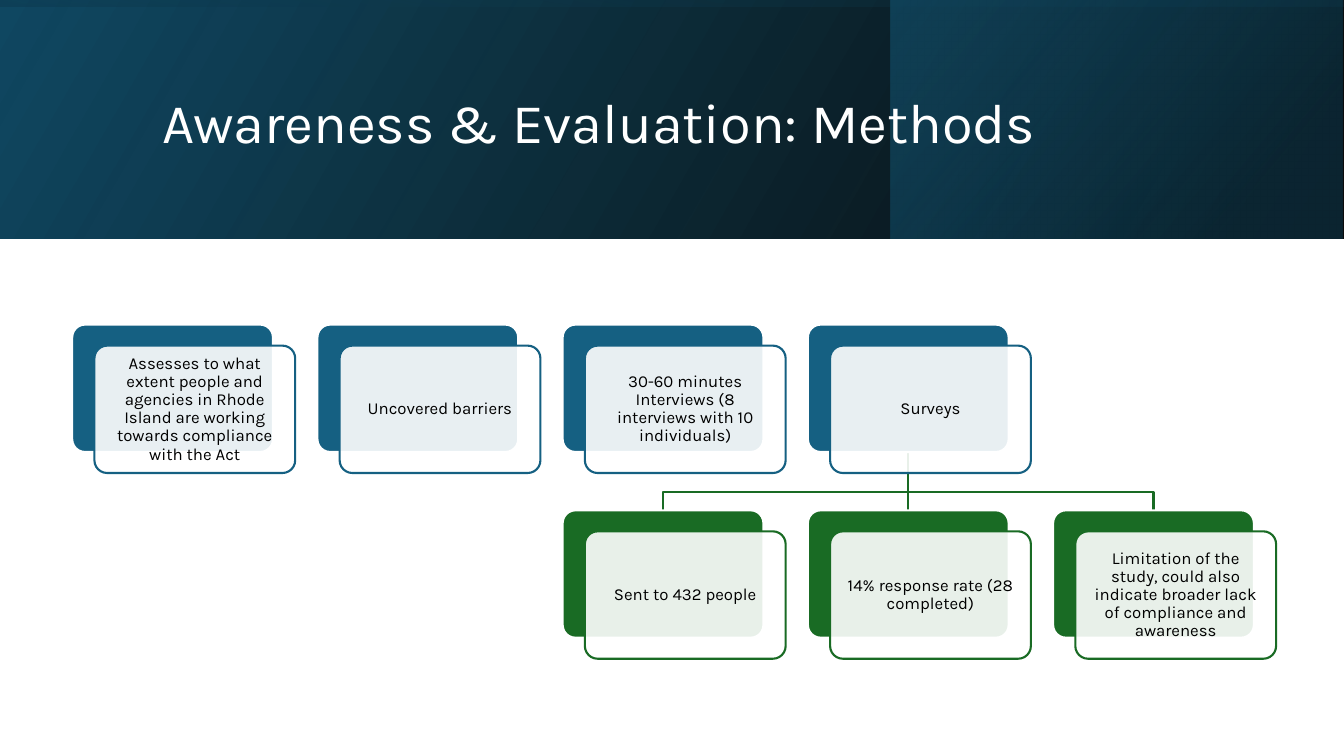
from pptx import Presentation
from pptx.dml.color import RGBColor as RGB
from pptx.enum.shapes import MSO_CONNECTOR as Link, MSO_SHAPE as Kind
from pptx.enum.text import MSO_ANCHOR as Anchor, PP_ALIGN as Align
from pptx.oxml.ns import qn
from pptx.oxml.xmlchemy import OxmlElement as Node
from pptx.util import Cm, Pt

TITLE = "Awareness & Evaluation: Methods"
# (hue, first column, top, texts)
ROWS = [
    ("blue", 0, 8.18, [
        "Assesses to what extent people and agencies in Rhode Island "
        "are working towards compliance with the Act",
        "Uncovered barriers",
        "30-60 minutes Interviews (8 interviews with 10 individuals)",
        "Surveys",
    ]),
    ("green", 2, 12.86, [
        "Sent to 432 people",
        "14% response rate (28 completed)",
        "Limitation of the study, could also indicate broader lack of "
        "compliance and awareness",
    ]),
]
COLORS = {"blue": "156082", "green": "196B24", "navy": "104862",
          "deep": "0B3041", "white": "FFFFFF", "black": "000000"}
WIDE, HIGH, BAND = 33.87, 19.05, 6.02
# (left, top, width, height, turn, angle, stops as (position, colour, opacity))
BANDS = [
    (0, 0, WIDE, BAND, 0, 330, [(0, "black", 96), (100, "navy", 100)]),
    (22.45, 0, 11.38, BAND, 0, 320, [(19, "deep", 68), (100, "blue", 48)]),
    ((WIDE - BAND) / 2, (BAND - WIDE) / 2, BAND, WIDE, 270, 350,
     [(23, "navy", 16), (99, "black", 45)]),
]
LEFT, PITCH = 1.82, 6.18
CARD_W, CARD_H = 5.06, 3.21
SHIFT_X, SHIFT_Y = 0.56, 0.53
BEND = 12.4
PAD = Cm(0.22)
FRAME = {"word_wrap": True, "vertical_anchor": Anchor.MIDDLE}
TIGHT = {"margin_left": PAD, "margin_right": PAD,
         "margin_top": PAD, "margin_bottom": PAD}


def color(name):
    return RGB.from_string(COLORS[name])


def apply(item, values):
    for key, value in values.items():
        setattr(item, key, value)


def fade(shape, levels):
    """Set the opacity, in percent, of the fill colours in turn."""
    for tint, level in zip(shape.element.spPr.iter(qn("a:srgbClr")), levels):
        alpha = Node("a:alpha")
        alpha.set("val", str(level * 1000))
        tint.append(alpha)


def stroke(shape, hue):
    shape.line.color.rgb = color(hue)
    shape.line.width = Pt(1.5)


def write(shape, text, size, hue, align, frame):
    apply(shape.text_frame, frame)
    para = shape.text_frame.paragraphs[0]
    apply(para, {"text": text, "alignment": align, "line_spacing": 0.9})
    apply(para.font, {"name": "Karla", "size": Pt(size)})
    para.font.color.rgb = color(hue)


def add_band(shapes, left, top, wide, high, turn, angle, stops):
    band = shapes.add_shape(Kind.RECTANGLE, Cm(left), Cm(top), Cm(wide), Cm(high))
    band.shadow.inherit = False
    band.line.fill.background()
    band.rotation = turn
    band.element.spPr.find(qn("a:xfrm")).set("flipH", "1")
    band.fill.gradient()
    band.fill.gradient_angle = 360 - angle
    for stop, (place, hue, _) in zip(band.fill.gradient_stops, stops):
        stop.position = place / 100
        stop.color.rgb = color(hue)
    fade(band, [level for _, _, level in stops])


def add_box(shapes, left, top, fill, line):
    box = shapes.add_shape(Kind.ROUNDED_RECTANGLE,
                           Cm(left), Cm(top), Cm(CARD_W), Cm(CARD_H))
    box.shadow.inherit = False
    box.adjustments[0] = 0.1
    box.fill.solid()
    box.fill.fore_color.rgb = color(fill)
    stroke(box, line)
    return box


def add_card(shapes, left, top, hue, text):
    """Draw a solid box with a text box shifted over it; return the solid one."""
    back = add_box(shapes, left, top, hue, "white")
    front = add_box(shapes, left + SHIFT_X, top + SHIFT_Y, "white", hue)
    fade(front, [90])
    write(front, text, 12, "black", Align.CENTER, {**FRAME, **TIGHT})
    return back


def add_elbow(shapes, start, end):
    (x1, y1), (x2, y2) = start, end
    path = shapes.build_freeform(Cm(x1), Cm(y1))
    points = [(x1, BEND), (x2, BEND), (x2, y2)]
    path.add_line_segments([(Cm(x), Cm(y)) for x, y in points], close=False)
    elbow = path.convert_to_shape()
    elbow.shadow.inherit = False
    elbow.fill.background()
    stroke(elbow, "green")


def main():
    deck = Presentation()
    apply(deck, {"slide_width": Cm(WIDE), "slide_height": Cm(HIGH)})
    shapes = deck.slides.add_slide(deck.slide_layouts[6]).shapes

    for band in BANDS:
        add_band(shapes, *band)
    title = shapes.add_textbox(Cm(3.84), Cm(0.97), Cm(27), Cm(4.37))
    write(title, TITLE, 40, "white", Align.LEFT, FRAME)

    def middle(col):
        return LEFT + col * PITCH + CARD_W / 2

    start, low = (middle(3), ROWS[0][2] + CARD_H), ROWS[1][2]
    for col in (4, 2):
        add_elbow(shapes, start, (middle(col), low))
    stem = shapes.add_connector(Link.STRAIGHT, Cm(start[0]), Cm(start[1]),
                                Cm(start[0]), Cm(low))
    stroke(stem, "green")
    stem.element.spPr.append(Node("a:effectLst"))

    cards = {}
    for hue, first, top, texts in ROWS:
        for col, text in enumerate(texts, first):
            cards[hue, col] = add_card(shapes, LEFT + col * PITCH, top, hue, text)
    stem.begin_connect(cards["blue", 3], 2)
    stem.end_connect(cards["green", 3], 0)

    deck.save("out.pptx")


if __name__ == "__main__":
    main()
